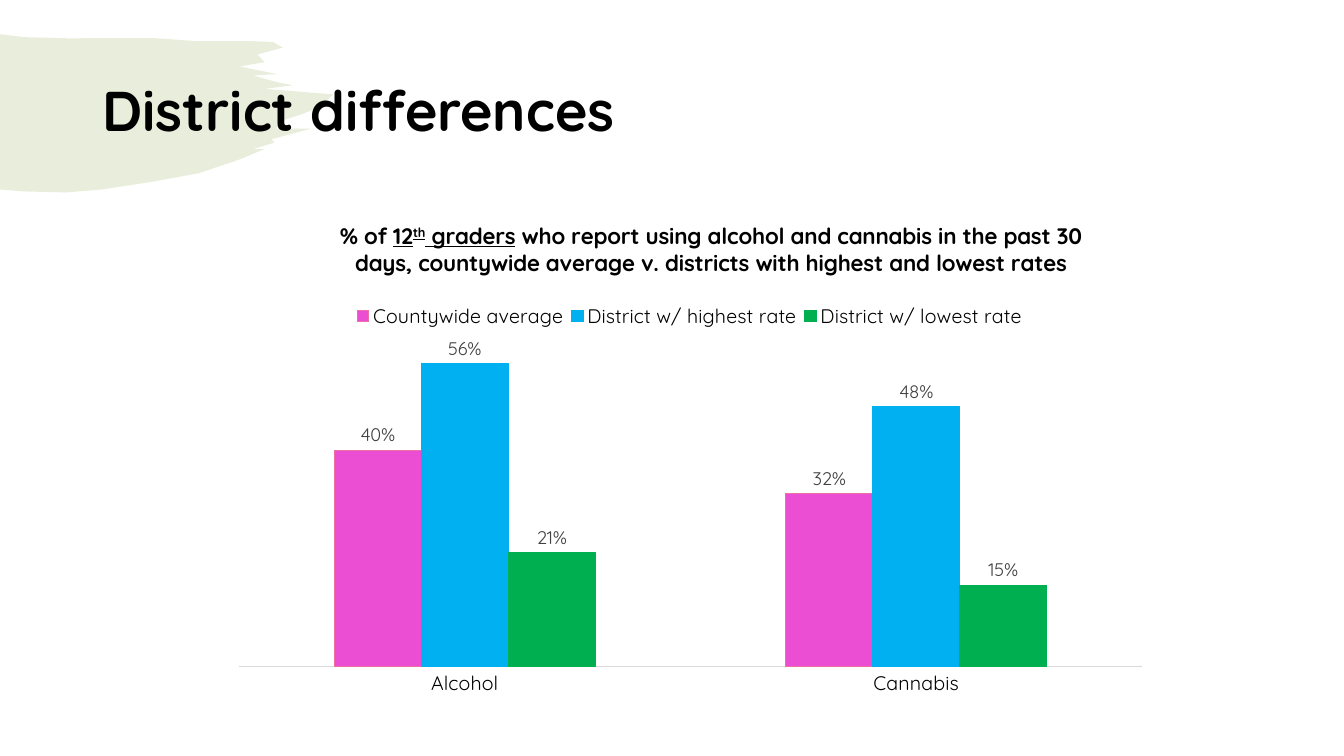
from dataclasses import dataclass

from lxml.etree import SubElement
from pptx import Presentation
from pptx.chart.data import CategoryChartData
from pptx.dml.color import RGBColor
from pptx.enum.chart import XL_CHART_TYPE as ChartType
from pptx.enum.chart import XL_LABEL_POSITION as LabelPos
from pptx.enum.chart import XL_LEGEND_POSITION as LegendPos
from pptx.enum.chart import XL_TICK_MARK as TickMark
from pptx.enum.text import MSO_ANCHOR as Anchor
from pptx.enum.text import MSO_AUTO_SIZE as AutoSize
from pptx.enum.text import PP_ALIGN as Align
from pptx.oxml import parse_xml
from pptx.oxml.ns import nsdecls, qn
from pptx.util import Pt

FONT = "Quicksand"
COLORS = {
    "text": "000000", "label": "404040", "axis": "D9D9D9", "brush": "93A94E",
    "average": "EB4ED2", "average_line": "EE6EA5",
    "highest": "00B0F0", "lowest": "00B050",
}


@dataclass
class Box:
    x: float
    y: float
    w: float
    h: float


@dataclass
class Series:
    name: str
    values: tuple[float, ...]
    fill: str
    line: str


@dataclass
class TitleRun:
    text: str
    underline: bool = False
    superscript: bool = False


CHART = Box(157.7, 151.2, 671.8, 352.8)
# Boxes inside the chart
CHART_TITLE = Box(83, 4, 540, 40)
LEGEND = Box(92, 65.5, 486, 18)
PLOT = Box(13, 93.1, 645, 231.6)

SERIES = [
    Series("Countywide average", (0.40, 0.32), "average", "average_line"),
    Series("District w/ highest rate", (0.56, 0.48), "highest", "highest"),
    Series("District w/ lowest rate", (0.21, 0.15), "lowest", "lowest"),
]
TITLE_RUNS = [
    TitleRun("% of "),
    TitleRun("12", underline=True),
    TitleRun("th", underline=True, superscript=True),
    TitleRun(" graders", underline=True),
    TitleRun(" who report using alcohol and cannabis in the past 30 days, "
             "countywide average v. districts with highest and lowest rates"),
]

# Brush outline in points, clockwise from the top left
BRUSH = [
    (0, 24.5), (18, 26.6), (48, 27.4), (109, 27.2), (140, 29.4), (179, 29.4), (195, 30),
    (202, 34), (184, 39), (189, 44.5), (171, 47.5), (198, 53), (181, 54), (197, 58.5),
    (209, 61), (189, 63.5), (238, 67.5), (229, 76), (216, 81.5), (202, 86), (197, 92),
    (222, 92), (194, 99.5), (196, 102), (181, 106.5), (189, 106.5), (171, 114),
    (142, 123.8), (108, 130), (73, 135.4), (47, 137.5), (17, 136.8), (0, 135.4),
]


def rgb(name: str) -> RGBColor:
    return RGBColor.from_string(COLORS[name])


def set_font(font, size: float, color: str = "text", bold: bool = False) -> None:
    font.name, font.size, font.bold = FONT, Pt(size), bold
    font.color.rgb = rgb(color)


def add_brush(slide) -> None:
    start, *rest = [(Pt(x), Pt(y)) for x, y in BRUSH]
    builder = slide.shapes.build_freeform(*start)
    builder.add_line_segments(rest, close=True)
    sp = builder.convert_to_shape()
    sp.shadow.inherit = False
    sp.line.fill.background()
    sp.fill.solid()
    sp.fill.fore_color.rgb = rgb("brush")
    color = sp._element.spPr.find(".//" + qn("a:srgbClr"))
    SubElement(color, qn("a:alpha")).set("val", "20000")
    slide.shapes._spTree.insert(2, sp._element)  # behind the title


def set_title(slide) -> None:
    sp = slide.shapes.title
    sp.left, sp.top, sp.width, sp.height = Pt(66), Pt(28.8), Pt(828), Pt(104.4)
    tf = sp.text_frame
    tf.auto_size, tf.vertical_anchor, tf.word_wrap = AutoSize.NONE, Anchor.MIDDLE, True
    p = tf.paragraphs[0]
    p.text, p.alignment, p.line_spacing = "District differences", Align.LEFT, 0.9
    set_font(p.font, 40, bold=True)


def place(element, index: int, box: Box, inner: bool = False) -> None:
    """Give a chart part a fixed place within the chart."""
    for old in element.findall(qn("c:layout")):
        element.remove(old)
    target = '<c:layoutTarget val="inner"/>' if inner else ""
    element.insert(index, parse_xml(
        f'<c:layout {nsdecls("c")}><c:manualLayout>{target}'
        '<c:xMode val="edge"/><c:yMode val="edge"/>'
        f'<c:x val="{box.x / CHART.w:.4f}"/><c:y val="{box.y / CHART.h:.4f}"/>'
        f'<c:w val="{box.w / CHART.w:.4f}"/><c:h val="{box.h / CHART.h:.4f}"/>'
        '</c:manualLayout></c:layout>'))


def add_rates_chart(slide) -> None:
    data = CategoryChartData(number_format="0%")
    data.categories = ["Alcohol", "Cannabis"]
    for s in SERIES:
        data.add_series(s.name, s.values)
    chart = slide.shapes.add_chart(ChartType.COLUMN_CLUSTERED, Pt(CHART.x), Pt(CHART.y),
                                   Pt(CHART.w), Pt(CHART.h), data).chart
    set_font(chart.font, 10)

    # Columns and their labels
    plot = chart.plots[0]
    plot.gap_width, plot.overlap, plot.vary_by_categories = 219, 0, False
    for s, column in zip(SERIES, plot.series):
        column.format.fill.solid()
        column.format.fill.fore_color.rgb = rgb(s.fill)
        column.format.line.color.rgb = rgb(s.line)
        column.format.line.width = Pt(0.75)
        labels = column.data_labels
        labels.show_value, labels.position = True, LabelPos.OUTSIDE_END
        labels.number_format, labels.number_format_is_linked = "0%", False
        set_font(labels.font, 13, "label")

    # Axes
    axis = chart.category_axis
    axis.major_tick_mark = axis.minor_tick_mark = TickMark.NONE
    axis.format.line.color.rgb, axis.format.line.width = rgb("axis"), Pt(0.75)
    set_font(axis.tick_labels.font, 14)
    values = chart.value_axis
    values.minimum_scale, values.maximum_scale = 0, 0.6
    values.has_major_gridlines = values.visible = False

    # Legend
    chart.has_legend = True
    chart.legend.position, chart.legend.include_in_layout = LegendPos.TOP, False
    set_font(chart.legend.font, 14)

    # Chart title
    p = chart.chart_title.text_frame.paragraphs[0]
    p.alignment = Align.CENTER
    set_font(p.font, 16, bold=True)
    for part in TITLE_RUNS:
        r = p.add_run()
        r.text = part.text
        set_font(r.font, 16, bold=True)
        r.font.underline = part.underline
        if part.superscript:
            r._r.get_or_add_rPr().set("baseline", "30000")

    place(chart.chart_title._element, 1, CHART_TITLE)
    place(chart.legend._element, 1, LEGEND)
    place(plot._element.getparent(), 0, PLOT, inner=True)


def main() -> None:
    prs = Presentation()
    prs.slide_width, prs.slide_height = Pt(960), Pt(540)
    slide = prs.slides.add_slide(prs.slide_layouts[5])
    set_title(slide)
    add_brush(slide)
    add_rates_chart(slide)
    prs.save("out.pptx")


if __name__ == "__main__":
    main()
